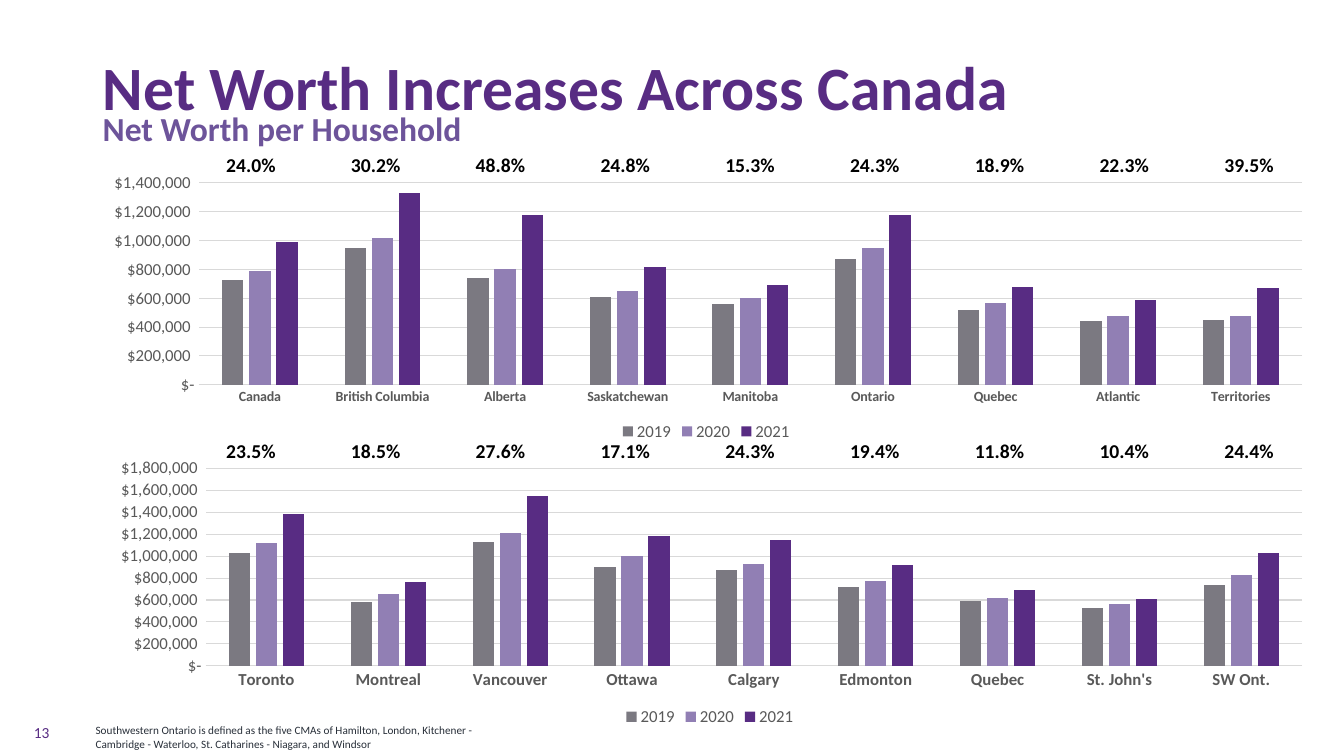
import pptx
import pptx.chart.data
import pptx.dml.color
import pptx.enum.chart
import pptx.enum.text
import pptx.util

Inches = pptx.util.Inches
Pt = pptx.util.Pt
ALIGN = pptx.enum.text.PP_ALIGN
ANCHOR = pptx.enum.text.MSO_ANCHOR
FIT = pptx.enum.text.MSO_AUTO_SIZE
XL = pptx.enum.chart

TITLE = "Net Worth Increases Across Canada"
SUBTITLE = "Net Worth per Household"
FOOTNOTE = ("Southwestern Ontario is defined as the five CMAs of Hamilton, London, Kitchener - "
            "Cambridge - Waterloo, St. Catharines - Niagara, and Windsor")
PAGE = "13"
YEARS = ("2019", "2020", "2021")

PANELS = [
    {
        "box": (0.85, 1.66, 12.31, 2.76),
        "growth_top": 1.48,
        "label_style": "region",
        "max": 1400000,
        "rows": [
            ("Canada", "24.0%", 730000, 790000, 990000),
            ("British Columbia", "30.2%", 950000, 1020000, 1330000),
            ("Alberta", "48.8%", 740000, 800000, 1180000),
            ("Saskatchewan", "24.8%", 610000, 650000, 820000),
            ("Manitoba", "15.3%", 560000, 600000, 690000),
            ("Ontario", "24.3%", 870000, 950000, 1180000),
            ("Quebec", "18.9%", 520000, 570000, 680000),
            ("Atlantic", "22.3%", 440000, 480000, 590000),
            ("Territories", "39.5%", 450000, 480000, 670000),
        ],
    },
    {
        "box": (0.92, 4.49, 12.24, 2.76),
        "growth_top": 4.31,
        "label_style": "city",
        "max": 1800000,
        "rows": [
            ("Toronto", "23.5%", 1030000, 1120000, 1380000),
            ("Montreal", "18.5%", 580000, 650000, 760000),
            ("Vancouver", "27.6%", 1130000, 1210000, 1550000),
            ("Ottawa", "17.1%", 900000, 1000000, 1180000),
            ("Calgary", "24.3%", 870000, 930000, 1150000),
            ("Edmonton", "19.4%", 720000, 770000, 920000),
            ("Quebec", "11.8%", 590000, 620000, 690000),
            ("St. John's", "10.4%", 530000, 560000, 610000),
            ("SW Ont.", "24.4%", 740000, 830000, 1030000),
        ],
    },
]

THEME = {
    "font": "Calibri",
    "series": ("7B7981", "917FB4", "582C83"),
    "grid": "D9D9D9",
    "title": (44, "582C83", True),
    "subtitle": (24, "6D549A", True),
    "footnote": (8, "282F39", False),
    "page": (11, "582C83", False),
    "growth": (14, "000000", True),
    "chart": (12, "000000", False),
    "axis": (12, "595959", False),
    "region": (10, "595959", True),
    "city": (12, "595959", True),
}
MONEY = '_-"$"* #,##0_-;\\-"$"* #,##0_-;_-"$"* "-"'
PLAIN_TABLE = "{2D5ABB26-0587-4C30-8999-92F81FD0307C}"


def rgb(value):
    return pptx.dml.color.RGBColor.from_string(value)


def style(font, name):
    size, color, bold = THEME[name]
    for key, value in {"name": THEME["font"], "size": Pt(size), "bold": bold}.items():
        setattr(font, key, value)
    font.color.rgb = rgb(color)


def write(tf, text, name, **paragraph):
    p = tf.paragraphs[0]
    for key, value in paragraph.items():
        setattr(p, key, value)
    r = p.add_run()
    r.text = text
    style(r.font, name)


def add_text(s, box, text, name, align=ALIGN.LEFT, **frame):
    tf = s.shapes.add_textbox(*map(Inches, box)).text_frame
    for key, value in {"word_wrap": True, **frame}.items():
        setattr(tf, key, value)
    write(tf, text, name, alignment=align)


def thin_line(line):
    line.color.rgb = rgb(THEME["grid"])
    line.width = Pt(0.75)


def add_worth_chart(s, panel):
    names, _, *values = zip(*panel["rows"])
    data = pptx.chart.data.CategoryChartData()
    data.categories = names
    for year, amounts in zip(YEARS, values):
        data.add_series(year, amounts)
    chart = s.shapes.add_chart(XL.XL_CHART_TYPE.COLUMN_CLUSTERED,
                               *map(Inches, panel["box"]), data).chart
    chart.has_title = False
    style(chart.font, "chart")
    chart.has_legend = True
    chart.legend.position = XL.XL_LEGEND_POSITION.BOTTOM
    chart.legend.include_in_layout = False
    style(chart.legend.font, "axis")

    plot = chart.plots[0]
    for key, value in {"gap_width": 219, "overlap": -27, "vary_by_categories": False}.items():
        setattr(plot, key, value)
    for series, color in zip(plot.series, THEME["series"]):
        series.format.fill.solid()
        series.format.fill.fore_color.rgb = rgb(color)

    for axis, name in ((chart.category_axis, panel["label_style"]), (chart.value_axis, "axis")):
        axis.major_tick_mark = XL.XL_TICK_MARK.NONE
        axis.minor_tick_mark = XL.XL_TICK_MARK.NONE
        style(axis.tick_labels.font, name)
    thin_line(chart.category_axis.format.line)
    axis = chart.value_axis
    limits = {"minimum_scale": 0, "maximum_scale": panel["max"], "major_unit": 200000}
    for key, value in limits.items():
        setattr(axis, key, value)
    axis.format.line.fill.background()
    thin_line(axis.major_gridlines.format.line)
    axis.tick_labels.number_format = MONEY
    axis.tick_labels.number_format_is_linked = False


def add_growth_table(s, panel):
    rows = panel["rows"]
    box = (1.87, panel["growth_top"], 11.14, 0.41)
    frame = s.shapes.add_table(1, len(rows), *map(Inches, box))
    frame._element.xpath(".//a:tableStyleId")[0].text = PLAIN_TABLE
    table = frame.table
    table.first_row = False
    table.horz_banding = False
    for cell, row in zip(table.rows[0].cells, rows):
        cell.fill.background()
        write(cell.text_frame, row[1], "growth", alignment=ALIGN.CENTER)


def main():
    prs = pptx.Presentation()
    prs.slide_width, prs.slide_height = Inches(13.33), Inches(7.5)
    s = prs.slides.add_slide(prs.slide_layouts[5])

    title = s.shapes.title
    box = map(Inches, (0.92, 0.43, 11.99, 0.93))
    for key, value in zip(("left", "top", "width", "height"), box):
        setattr(title, key, value)
    tf = title.text_frame
    tf.auto_size = FIT.NONE
    tf.vertical_anchor = ANCHOR.MIDDLE
    write(tf, TITLE, "title", alignment=ALIGN.LEFT, line_spacing=0.9)

    add_text(s, (0.92, 1.02, 8.44, 0.5), SUBTITLE, "subtitle", auto_size=FIT.SHAPE_TO_FIT_TEXT)
    add_text(s, (0.85, 7.13, 4.36, 0.37), FOOTNOTE, "footnote", auto_size=FIT.SHAPE_TO_FIT_TEXT)
    add_text(s, (0, 7.07, 0.59, 0.4), PAGE, "page", ALIGN.RIGHT, vertical_anchor=ANCHOR.MIDDLE)

    for panel in PANELS:
        add_worth_chart(s, panel)
        add_growth_table(s, panel)

    prs.save("out.pptx")


if __name__ == "__main__":
    main()
